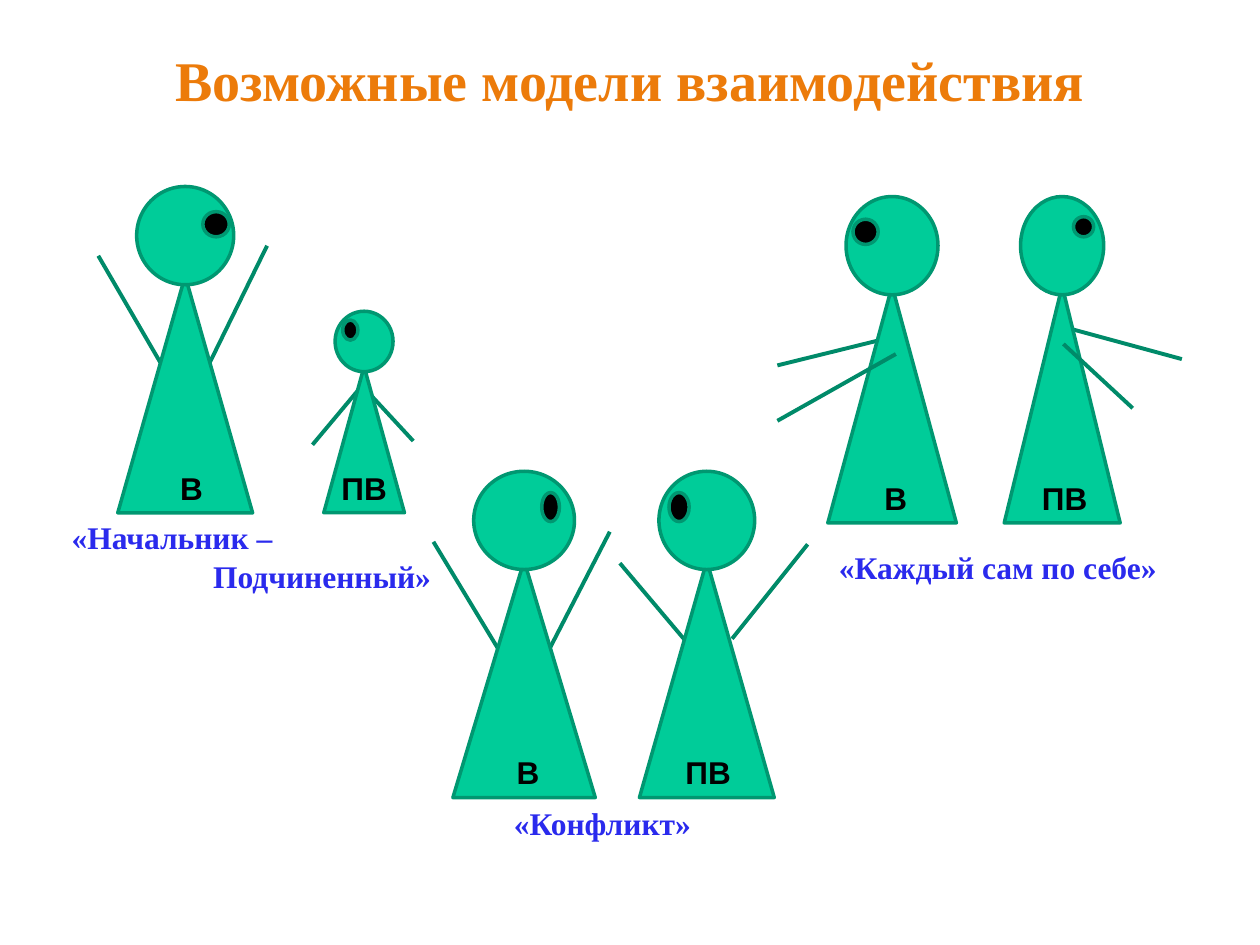
from lxml import etree
from pptx import Presentation
from pptx.dml.color import RGBColor
from pptx.enum import shapes, text
from pptx.oxml.ns import qn
from pptx.util import Inches, Pt

ORANGE = RGBColor(0xEC, 0x7B, 0x0A)
BLUE = RGBColor(0x2A, 0x2A, 0xED)
BLACK = RGBColor(0, 0, 0)
GREEN = RGBColor(0, 0xCC, 0x99)
OUTLINE = RGBColor(0, 0x97, 0x71)
ARM = RGBColor(0, 0x8A, 0x69)
SERIF, SANS = "Times New Roman", "Arial"
LEFT, CENTER, RIGHT = text.PP_ALIGN.LEFT, text.PP_ALIGN.CENTER, text.PP_ALIGN.RIGHT
LABEL_W, LABEL_H = 0.78, 0.4

TITLE = "Возможные модели взаимодействия"
TALL = dict(height=2.59, body_h=1.88, head_h=0.78)
SMALL = dict(height=1.6, body_h=1.16, head_h=0.48)

MODELS = [
    dict(base=4.07, caption=[("«Начальник –", LEFT), ("Подчиненный»", RIGHT)],
         box=(0.47, 4.06, 3.05, 0.71), wrap=True,
         figures=[
             dict(TALL, label="В", label_x=1.52, x=1.47, body_w=1.07, head_w=0.77,
                  eye=(1.61, 1.68, 0.21, 0.2),
                  back=[(1.28, 2.89, 0.78, 2.03), (1.62, 2.97, 2.12, 1.95)]),
             dict(SMALL, label="ПВ", label_x=2.89, x=2.89, body_w=0.64, head_w=0.46,
                  eye=(2.72, 2.54, 0.12, 0.16),
                  back=[(2.84, 3.1, 2.48, 3.53), (2.91, 3.1, 3.28, 3.5)]),
         ]),
    dict(base=4.15, caption=[("«Каждый сам по себе»", LEFT)],
         box=(6.56, 4.3, 2.76, 0.4), wrap=False,
         figures=[
             dict(TALL, label="В", label_x=7.11, x=7.08, body_w=1.02, head_w=0.73,
                  eye=(6.77, 1.74, 0.2, 0.2),
                  back=[(6.98, 2.7, 6.17, 2.9)], front=[(7.11, 2.81, 6.17, 3.34)]),
             dict(TALL, label="ПВ", label_x=8.45, x=8.43, body_w=0.92, head_w=0.66,
                  eye=(8.52, 1.72, 0.16, 0.16),
                  back=[(8.35, 2.57, 9.38, 2.85)], front=[(8.44, 2.73, 8.99, 3.24)]),
         ]),
    dict(base=6.33, caption=[("«Конфликт»", LEFT)],
         box=(3.98, 6.33, 1.64, 0.4), wrap=False,
         figures=[
             dict(TALL, label="В", label_x=4.19, x=4.16, body_w=1.13, head_w=0.8,
                  eye=(4.3, 3.91, 0.14, 0.23),
                  back=[(3.96, 5.16, 3.44, 4.3), (4.32, 5.23, 4.84, 4.22)]),
             dict(TALL, label="ПВ", label_x=5.62, x=5.61, body_w=1.07, head_w=0.76,
                  eye=(5.31, 3.91, 0.16, 0.23),
                  back=[(5.52, 5.18, 4.92, 4.47), (5.81, 5.07, 6.41, 4.32)]),
         ]),
]


def inches(lengths):
    return [Inches(v) for v in lengths]


def add_text(parent, lines, box, size=18, font=SERIF, color=BLUE, wrap=True):
    sp = parent.add_textbox(*inches(box))
    tf = sp.text_frame
    tf.word_wrap = wrap
    for i, (line, align) in enumerate(lines):
        p = tf.add_paragraph() if i else tf.paragraphs[0]
        p.alignment = align
        if i:
            p.space_before = Pt(1)
        r = p.add_run()
        r.text = line
        r.font.name, r.font.size, r.font.bold = font, Pt(size), True
        r.font.color.rgb = color


def add_part(parent, kind, box, fill=GREEN):
    sp = parent.add_shape(kind, *inches(box))
    sp.shadow.inherit = False
    sp.fill.solid()
    sp.fill.fore_color.rgb = fill
    sp.line.color.rgb = OUTLINE
    sp.line.width = Pt(2)


def add_arms(parent, arms):
    for ends in arms:
        c = parent.add_connector(shapes.MSO_CONNECTOR.STRAIGHT, *inches(ends))
        c.line.color.rgb = ARM
        c.line.width = Pt(2.25)
        etree.SubElement(c._element.spPr, qn("a:effectLst"))


def add_figure(parent, fig, base):
    def centered(width, top, height):
        return fig["x"] - width / 2, top, width, height

    body = centered(fig["body_w"], base - fig["body_h"], fig["body_h"])
    head = centered(fig["head_w"], base - fig["height"], fig["head_h"])
    add_arms(parent, fig["back"])
    add_part(parent, shapes.MSO_SHAPE.ISOSCELES_TRIANGLE, body)
    add_part(parent, shapes.MSO_SHAPE.OVAL, head)
    add_part(parent, shapes.MSO_SHAPE.OVAL, fig["eye"], BLACK)
    add_arms(parent, fig.get("front", []))


def main():
    prs = Presentation()
    prs.slide_width, prs.slide_height = Inches(10), Inches(7.5)
    s = prs.slides.add_slide(prs.slide_layouts[6])
    add_text(s.shapes, [(TITLE, CENTER)], (0, 0.31, 10, 0.64), size=32, color=ORANGE)
    for model in MODELS:
        group = s.shapes.add_group_shape().shapes
        base = model["base"]
        for fig in model["figures"]:
            add_figure(group, fig, base)
        for fig in model["figures"]:
            box = fig["label_x"] - LABEL_W / 2, base - LABEL_H, LABEL_W, LABEL_H
            add_text(group, [(fig["label"], CENTER)], box, font=SANS, color=BLACK)
    for model in MODELS:
        add_text(s.shapes, model["caption"], model["box"], wrap=model["wrap"])
    prs.save("out.pptx")


if __name__ == "__main__":
    main()
